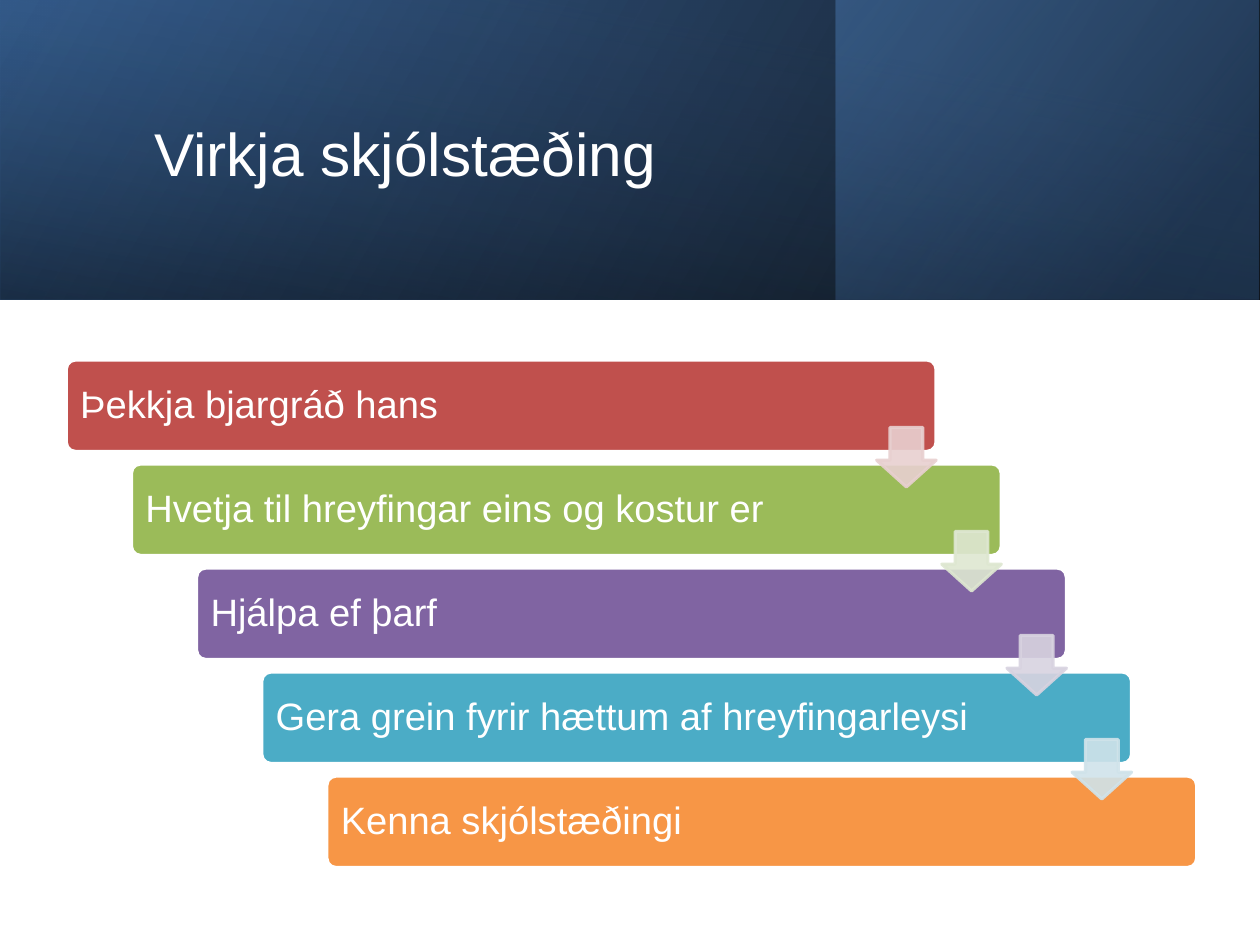
from lxml import etree
from pptx import Presentation
from pptx.dml.color import RGBColor
from pptx.enum.shapes import MSO_SHAPE
from pptx.enum.text import MSO_ANCHOR, PP_ALIGN
from pptx.oxml.ns import qn
from pptx.util import Cm, Inches, Pt

RECT, ROUND, ARROW = MSO_SHAPE.RECTANGLE, MSO_SHAPE.ROUNDED_RECTANGLE, MSO_SHAPE.DOWN_ARROW
MIDDLE, LEFT = MSO_ANCHOR.MIDDLE, PP_ALIGN.LEFT

SLIDE_W, SLIDE_H = Cm(28), Cm(21)
FONT, WHITE = "Arial", "FFFFFF"
TITLE = "Virkja skjólstæðing"

# box, rotation, gradient angle, stops as (position %, colour, opacity %)
BANNER = [
    ((0, 0, 11.02, 2.62), 0, 330, [(0, "000000", 96), (100, "376092", 100)]),
    ((7.31, 0, 3.7, 2.62), 0, 320, [(19, "254061", 68), (100, "4F81BD", 48)]),
    ((4.2, -4.2, 2.62, 11.02), 270, 350, [(23, "376092", 16), (99, "000000", 45)]),
]

# text, card colour, colour of the arrow to the next step
STEPS = [
    ("Þekkja bjargráð hans", "C0504D", "E8D0D0"),
    ("Hvetja til hreyfingar eins og kostur er", "9BBB59", "DEE7D1"),
    ("Hjálpa ef þarf", "8064A2", "D8D3E0"),
    ("Gera grein fyrir hættum af hreyfingarleysi", "4BACC6", "D0E3EA"),
    ("Kenna skjólstæðingi", "F79646", None),
]
CARD_X, CARD_Y, CARD_W, CARD_H = 0.58, 3.15, 7.61, 0.8
STEP_X, STEP_Y = 0.57, 0.91
ARROW_SIZE, ARROW_DROP, ARROW_OPACITY = 0.52, 0.59, 90


def rgb(color):
    return RGBColor.from_string(color)


def add_alpha(color_el, opacity):
    etree.SubElement(color_el, qn("a:alpha"), val=str(opacity * 1000))


def add_shape(slide, kind, box, fill=None, line=None, opacity=100, adj=()):
    sp = slide.shapes.add_shape(kind, *map(Inches, box))
    sp.shadow.inherit = False
    for i, value in enumerate(adj):
        sp.adjustments[i] = value
    if fill:
        sp.fill.solid()
        sp.fill.fore_color.rgb = rgb(fill)
    if line:
        sp.line.color.rgb = rgb(line)
        sp.line.width = Pt(2)
    else:
        sp.line.fill.background()
    if opacity < 100:
        for color_el in sp._element.spPr.iter(qn("a:srgbClr")):
            add_alpha(color_el, opacity)
    return sp


def set_gradient(sp, angle, stops):
    sp.fill.gradient()
    grad = sp._element.spPr.find(qn("a:gradFill"))
    grad.set("rotWithShape", "1")
    for child in list(grad):
        grad.remove(child)
    gs_list = etree.SubElement(grad, qn("a:gsLst"))
    for pos, color, opacity in stops:
        gs = etree.SubElement(gs_list, qn("a:gs"), pos=str(pos * 1000))
        add_alpha(etree.SubElement(gs, qn("a:srgbClr"), val=color), opacity)
    etree.SubElement(grad, qn("a:lin"), ang=str(angle * 60000), scaled="0")


def set_text(sp, text, size, color=WHITE, inset=0.1, after=0):
    tf = sp.text_frame
    tf.word_wrap = True
    tf.vertical_anchor = MIDDLE
    tf.margin_left = tf.margin_right = Inches(inset)
    p = tf.paragraphs[0]
    p.alignment = LEFT
    p.line_spacing = 0.9
    p.space_after = Pt(after)
    r = p.add_run()
    r.text = text
    r.font.size = Pt(size)
    r.font.name = FONT
    r.font.color.rgb = rgb(color)


def main():
    prs = Presentation()
    prs.slide_width, prs.slide_height = SLIDE_W, SLIDE_H
    slide = prs.slides.add_slide(prs.slide_layouts[6])

    for box, rotation, angle, stops in BANNER:
        sp = add_shape(slide, RECT, box)
        sp.rotation = rotation
        sp._element.spPr.get_or_add_xfrm().set("flipH", "1")
        set_gradient(sp, angle, stops)

    title = slide.shapes.add_textbox(*map(Inches, (1.25, 0.42, 8.79, 1.9)))
    set_text(title, TITLE, 38, after=6)

    corners = [(CARD_X + i * STEP_X, CARD_Y + i * STEP_Y) for i in range(len(STEPS))]
    for (x, y), (text, color, _) in zip(corners, STEPS):
        card = add_shape(slide, ROUND, (x, y, CARD_W, CARD_H), color, WHITE, adj=[0.1])
        set_text(card, text, 24)

    for (x, y), (_, _, color) in zip(corners, STEPS):
        if color:
            box = (x + CARD_W - ARROW_SIZE, y + ARROW_DROP, ARROW_SIZE, ARROW_SIZE)
            add_shape(slide, ARROW, box, color, color, ARROW_OPACITY, adj=[0.55, 0.45])

    prs.save("out.pptx")


if __name__ == "__main__":
    main()
